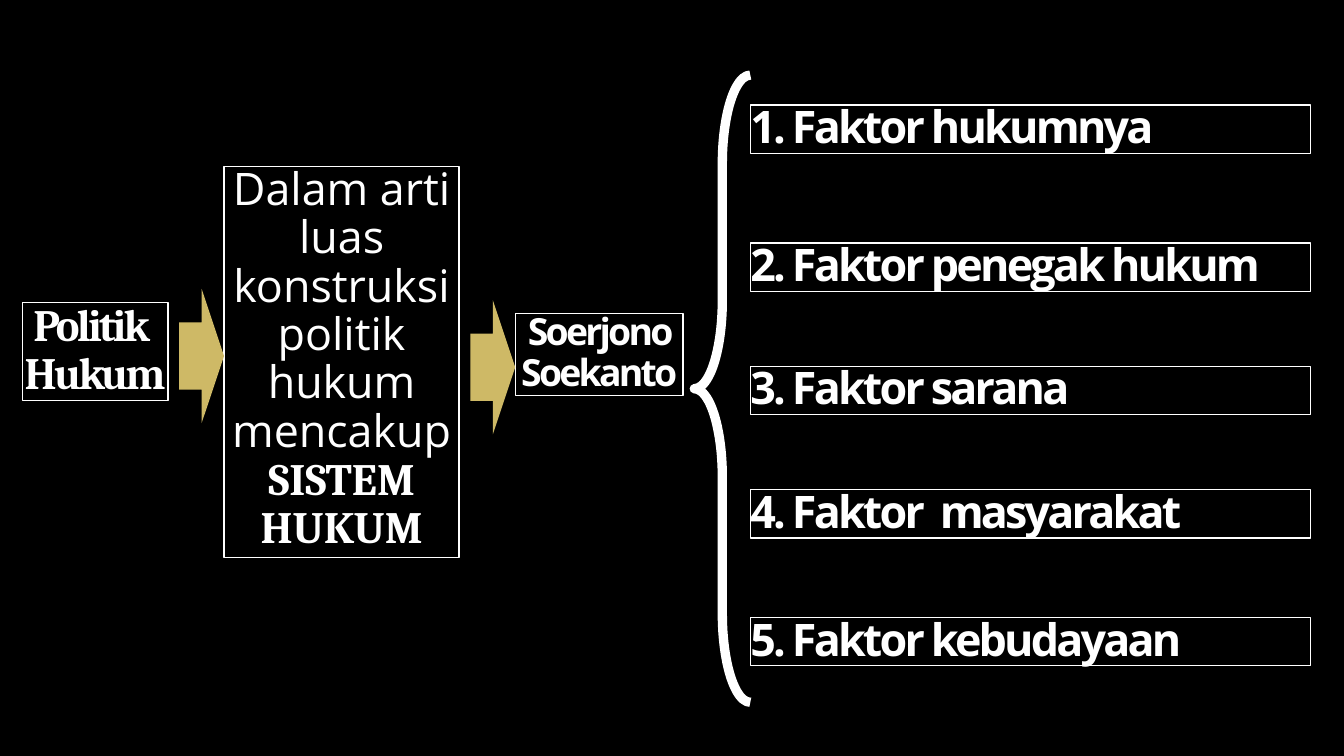
from pptx import Presentation
from pptx.dml.color import RGBColor
from pptx.enum.shapes import MSO_SHAPE
from pptx.enum.text import MSO_ANCHOR, MSO_AUTO_SIZE, PP_ALIGN
from pptx.util import Pt

BLACK = RGBColor(0x00, 0x00, 0x00)
WHITE = RGBColor(0xFF, 0xFF, 0xFF)
GOLD = RGBColor(0xCE, 0xB9, 0x66)
RECTANGLE = MSO_SHAPE.RECTANGLE
RIGHT_ARROW = MSO_SHAPE.RIGHT_ARROW
LEFT_BRACE = MSO_SHAPE.LEFT_BRACE
CENTER = PP_ALIGN.CENTER
JUSTIFY = PP_ALIGN.JUSTIFY
TOP = MSO_ANCHOR.TOP
GROW = MSO_AUTO_SIZE.SHAPE_TO_FIT_TEXT
SERIF = "Cambria"
SANS = "Open Sans"

presentation = Presentation()
presentation.slide_width = Pt(720)
presentation.slide_height = Pt(405)
slide = presentation.slides.add_slide(presentation.slide_layouts[6])
slide.background.fill.solid()
slide.background.fill.fore_color.rgb = BLACK


def add_outline(kind, left, top, width, height, line_width):
    shape = slide.shapes.add_shape(kind, Pt(left), Pt(top), Pt(width), Pt(height))
    shape.shadow.inherit = False
    shape.fill.background()
    shape.line.color.rgb = WHITE
    shape.line.width = Pt(line_width)
    return shape


def add_box(left, top, width, height, lines, font_name, size=24,
            bold=True, spacing=-150, alignment=CENTER):
    shape = add_outline(RECTANGLE, left, top, width, height, 0.75)
    frame = shape.text_frame
    frame.margin_left = frame.margin_top = frame.margin_right = frame.margin_bottom = 0
    frame.word_wrap = True
    frame.vertical_anchor = TOP
    frame.auto_size = GROW
    frame.text = "\n".join(lines)
    for paragraph in frame.paragraphs:
        paragraph.alignment = alignment
        paragraph.line_spacing = 0.9
        paragraph.font.color.rgb = WHITE
        paragraph.font.size = Pt(size)
        for run in paragraph.runs:
            run.font.name = font_name
            run.font.bold = bold
            run.font._element.set("spc", str(spacing))
    return shape


add_box(12, 162, 78, 52.5, ["Politik ", "Hukum"], SERIF)

system_box = add_box(120, 89.25, 126, 209.5,
                     ["Dalam arti luas konstruksi politik hukum mencakup "],
                     SANS, bold=False, spacing=0)
system_run = system_box.text_frame.paragraphs[0].add_run()
system_run.text = "SISTEM HUKUM"
system_run.font.name = SERIF
system_run.font.bold = True

add_box(276, 168, 90, 44, ["Soerjono Soekanto"], SANS, size=20)

for left, top in [(96, 154.75), (252, 160.75)]:
    arrow = slide.shapes.add_shape(RIGHT_ARROW, Pt(left), Pt(top), Pt(24), Pt(72))
    arrow.shadow.inherit = False
    arrow.fill.solid()
    arrow.fill.fore_color.rgb = GOLD
    arrow.line.fill.background()

brace = add_outline(LEFT_BRACE, 372, 40.25, 30, 336, 5)
brace.adjustments[0] = 1.58
brace.adjustments[1] = 0.5

factors = [
    (56.25, "1. Faktor hukumnya"),
    (130.25, "2. Faktor penegak hukum"),
    (196.25, "3. Faktor sarana"),
    (262.25, "4. Faktor  masyarakat"),
    (330.75, "5. Faktor kebudayaan"),
]
for top, factor in factors:
    add_box(402, top, 300, 26, [factor], SANS, alignment=JUSTIFY)

presentation.save("out.pptx")
